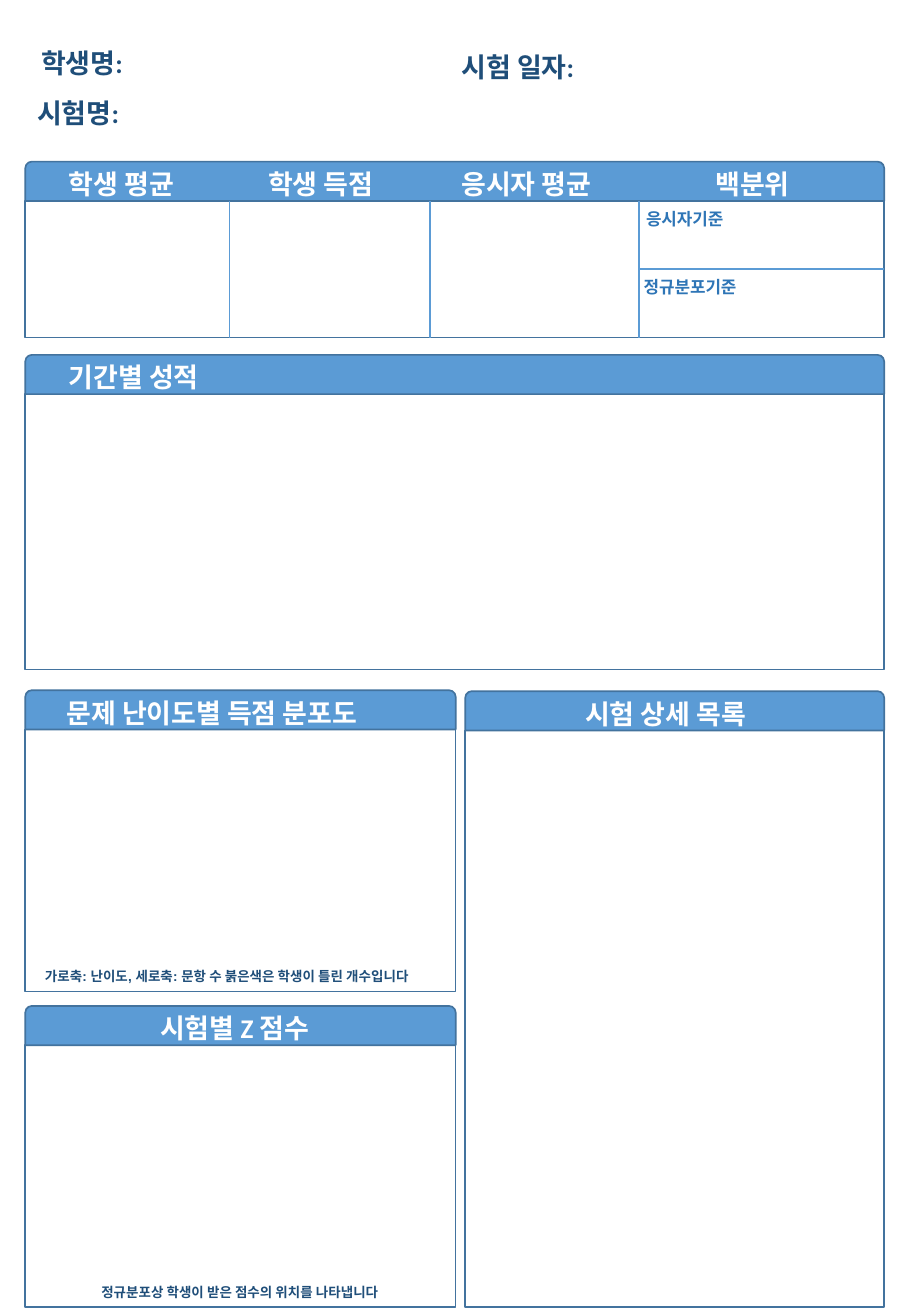
"""Build a one-page student exam report form."""
from lxml.etree import SubElement
from pptx import Presentation
from pptx.dml.color import RGBColor as RGB
from pptx.enum.shapes import MSO_CONNECTOR as CONN, MSO_SHAPE as SHAPE
from pptx.enum.text import MSO_AUTO_SIZE as FIT, PP_ALIGN as ALIGN
from pptx.oxml.ns import qn
from pptx.util import Cm, Pt

COLORS = {"header": "5B9BD5", "border": "43739E", "title": "FFFFFF",
          "dark": "1F4E79", "label": "2E75B6"}
LEFT, RIGHT, HALF = 0.53, 18.49, 9.53
DETAIL_LEFT, BOTTOM = 9.73, 27.33
HEADER_H = 0.82
SCORE_TOP, SCORE_BOTTOM = 3.38, 7.06
COLUMNS = [4.8, 8.99, 13.36]

# left, top, right, bottom, [(title, left, width)]
PANELS = [
    (LEFT, SCORE_TOP, RIGHT, SCORE_BOTTOM,
     [("학생 평균", 1.19, 2.92), ("학생 득점", 5.36, 2.92),
      ("응시자 평균", 9.4, 3.48), ("백분위", 14.71, 2.49)]),
    (LEFT, 7.42, RIGHT, 14, [("기간별 성적", 1.19, 3.48)]),
    (LEFT, 14.43, HALF, 20.73, [("문제 난이도별 득점 분포도", 1.14, 7.16)]),
    (DETAIL_LEFT, 14.45, RIGHT, BOTTOM, [("시험 상세 목록", 11.99, 4.19)]),
    (LEFT, 21.03, HALF, BOTTOM, [("시험별 Z 점수", 3.1, 3.89)]),
]
# text, left, top, width
FIELDS = [("학생명:", 0.61, 0.84, 2.39), ("시험명:", 0.53, 1.9, 2.39),
          ("시험 일자:", 9.4, 0.94, 3.07)]
RANKS = [("응시자기준", 13.26, 4.24, 2.29), ("정규분포기준", 13.21, 5.66, 2.64)]
AXIS_NOTE = ("가로축: 난이도, 세로축: 문항 수 붉은색은 학생이 틀린 개수입니다",
             0.69, 20.12, 8.97)
Z_NOTE = ("정규분포상 학생이 받은 점수의 위치를 나타냅니다", 0.46, 26.72, 9.12)


def add_text(s, text, left, top, width, height=0.94, size=16, font="Calibri",
             color="dark", align=ALIGN.LEFT, wrap=False):
    tf = s.shapes.add_textbox(Cm(left), Cm(top), Cm(width), Cm(height)).text_frame
    tf.word_wrap = wrap
    tf.auto_size = FIT.SHAPE_TO_FIT_TEXT
    p = tf.paragraphs[0]
    p.alignment = align
    r = p.add_run()
    r.text = text
    r.font.name, r.font.size, r.font.bold = font, Pt(size), True
    r.font.color.rgb = RGB.from_string(COLORS[color])


def add_box(s, kind, left, top, right, bottom, fill=None):
    sp = s.shapes.add_shape(kind, Cm(left), Cm(top), Cm(right - left), Cm(bottom - top))
    sp.shadow.inherit = False
    if fill:
        sp.fill.solid()
        sp.fill.fore_color.rgb = RGB.from_string(COLORS[fill])
    else:
        sp.fill.background()
    sp.line.color.rgb = RGB.from_string(COLORS["border"])
    sp.line.width = Pt(1)


def add_line(s, x1, y1, x2, y2):
    line = s.shapes.add_connector(CONN.STRAIGHT, Cm(x1), Cm(y1), Cm(x2), Cm(y2))
    line.line.color.rgb = RGB.from_string(COLORS["header"])
    line.line.width = Pt(1)
    SubElement(line._element.spPr, qn("a:effectLst"))


def add_panel(s, left, top, right, bottom, titles):
    split = top + HEADER_H
    add_box(s, SHAPE.RECTANGLE, left, split, right, bottom)
    add_box(s, SHAPE.ROUND_2_SAME_RECTANGLE, left, top, right, split, fill="header")
    for text, x, width in titles:
        add_text(s, text, x, top, width, color="title")


def main():
    prs = Presentation()
    prs.slide_width, prs.slide_height = Cm(19.05), Cm(27.51)
    s = prs.slides.add_slide(prs.slide_layouts[6])
    for panel in PANELS:
        add_panel(s, *panel)

    body_top = SCORE_TOP + HEADER_H
    for x in COLUMNS:
        add_line(s, x, body_top, x, SCORE_BOTTOM)
    middle = (body_top + SCORE_BOTTOM) / 2
    add_line(s, RIGHT, middle, COLUMNS[-1], middle)

    for field in FIELDS:
        add_text(s, *field)
    for rank in RANKS:
        add_text(s, *rank, height=1.12, size=10, color="label")
    add_text(s, *AXIS_NOTE, height=0.61, size=8, font="Arial")
    add_text(s, *Z_NOTE, height=0.61, size=8, font="Arial",
             align=ALIGN.CENTER, wrap=True)
    prs.save("out.pptx")


if __name__ == "__main__":
    main()
